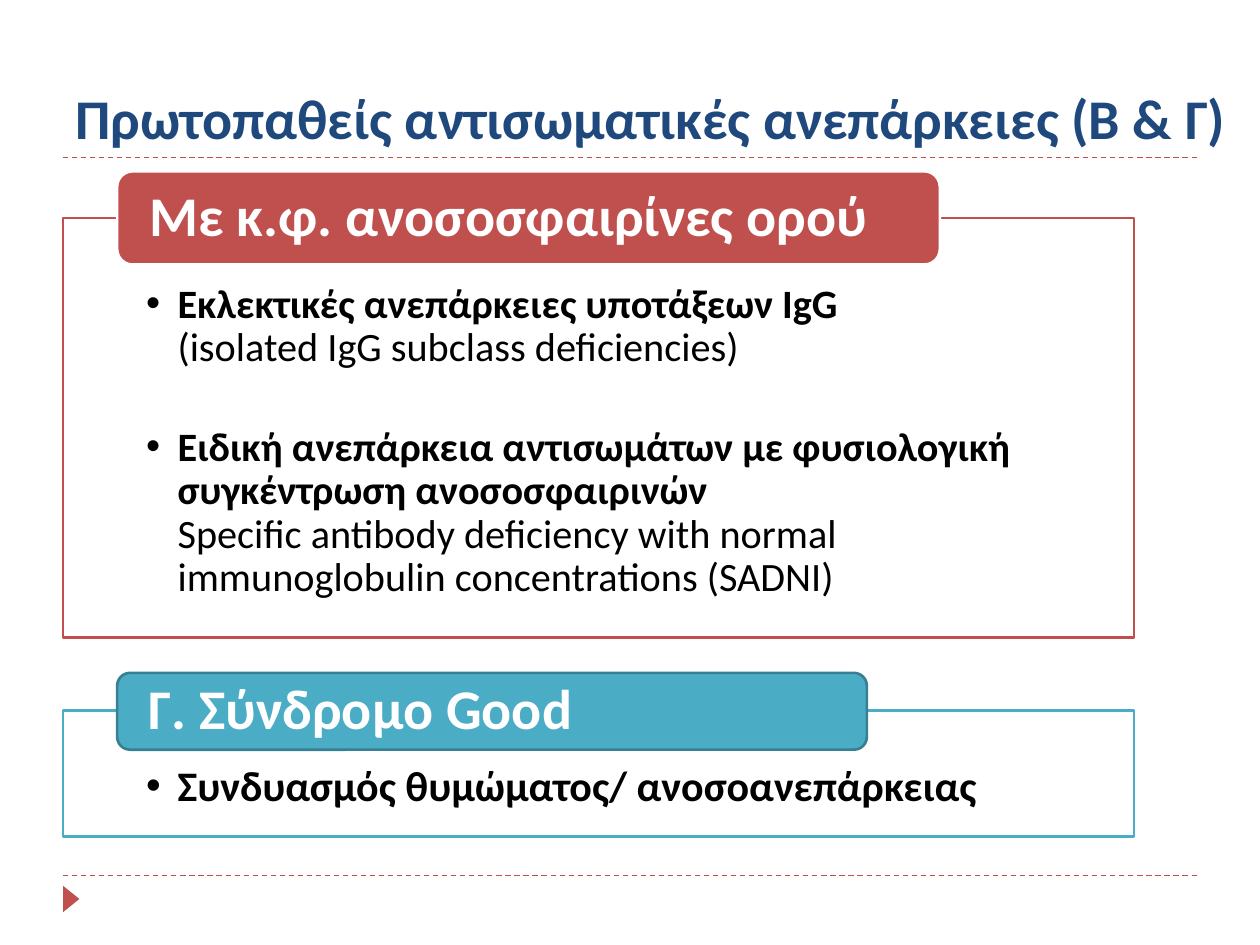
from lxml import etree
from pptx import Presentation
from pptx.dml.color import RGBColor
from pptx.enum import dml, shapes, text
from pptx.oxml import ns
from pptx.util import Inches, Pt

FONT = "Calibri"
NAVY = RGBColor(0x1F, 0x49, 0x7D)
RED = RGBColor(0xC0, 0x50, 0x4D)
TEAL = RGBColor(0x4B, 0xAC, 0xC6)
DARK_TEAL = RGBColor(0x37, 0x7F, 0x92)
WHITE = RGBColor(0xFF, 0xFF, 0xFF)
BLACK = RGBColor(0, 0, 0)
LEFT, RIGHT = 0.5, 9.5
HEADING_INSETS = (0.22, 0, 0.22, 0)


def format_run(run, size, color, bold=True):
    """Set the font of one run."""
    run.font.name = FONT
    run.font.size = Pt(size)
    run.font.bold = bold
    run.font.color.rgb = color


def set_insets(frame, insets):
    """Set the left, top, right and bottom margins of a text frame."""
    (frame.margin_left, frame.margin_top,
     frame.margin_right, frame.margin_bottom) = map(Inches, insets)
    frame.word_wrap = True


def add_box(slide, kind, box, fill, line=None):
    """Add a flat preset shape in the given box."""
    shape = slide.shapes.add_shape(kind, *map(Inches, box))
    shape.shadow.inherit = False
    shape.fill.solid()
    shape.fill.fore_color.rgb = fill
    if line is None:
        shape.line.fill.background()
    else:
        shape.line.color.rgb = line
        shape.line.width = Pt(1.5)
    return shape


def add_rule(slide, top):
    """Add a dashed horizontal rule across the slide."""
    rule = slide.shapes.add_connector(
        shapes.MSO_CONNECTOR.STRAIGHT,
        Inches(LEFT), Inches(top), Inches(RIGHT), Inches(top))
    rule.line.color.rgb = RED
    rule.line.width = Pt(0.75)
    rule.line.dash_style = dml.MSO_LINE.DASH
    etree.SubElement(rule._element.spPr, ns.qn("a:effectLst"))


def add_bullet(paragraph):
    """Give a paragraph a hanging bullet."""
    properties = paragraph._p.get_or_add_pPr()
    properties.set("marL", str(Inches(0.25)))
    properties.set("indent", str(Inches(-0.25)))
    etree.SubElement(properties, ns.qn("a:buFont"), typeface="Arial")
    etree.SubElement(properties, ns.qn("a:buChar"), char="•")


def add_title(slide, box, wording):
    """Place and format the title placeholder."""
    title = slide.shapes.title
    title.left, title.top, title.width, title.height = map(Inches, box)
    frame = title.text_frame
    frame.text = wording
    frame.word_wrap = True
    frame.auto_size = text.MSO_AUTO_SIZE.NONE
    frame.vertical_anchor = text.MSO_ANCHOR.BOTTOM
    paragraph = frame.paragraphs[0]
    paragraph.alignment = text.PP_ALIGN.LEFT
    format_run(paragraph.runs[0], 32, NAVY)


def add_section(slide, box, insets, color, items, size, heading, heading_box, border):
    """Add a bordered list with a rounded heading over its top edge."""
    panel = add_box(slide, shapes.MSO_SHAPE.RECTANGLE, box, WHITE, color)
    frame = panel.text_frame
    set_insets(frame, insets)
    frame.vertical_anchor = text.MSO_ANCHOR.TOP
    for index, item in enumerate(items):
        paragraph = frame.add_paragraph() if index else frame.paragraphs[0]
        paragraph.text = item
        paragraph.alignment = text.PP_ALIGN.LEFT
        paragraph.line_spacing = 0.9
        paragraph.space_after = Pt(32 if index < len(items) - 1 else 0)
        add_bullet(paragraph)
        for position, run in enumerate(paragraph.runs):
            format_run(run, size, BLACK, bold=position == 0)

    label = add_box(slide, shapes.MSO_SHAPE.ROUNDED_RECTANGLE, heading_box, color, border)
    label.text_frame.text = heading
    set_insets(label.text_frame, HEADING_INSETS)
    label.text_frame.vertical_anchor = text.MSO_ANCHOR.MIDDLE
    paragraph = label.text_frame.paragraphs[0]
    paragraph.alignment = text.PP_ALIGN.LEFT
    paragraph.line_spacing = 0.9
    format_run(paragraph.runs[0], 32, WHITE)


def main():
    """Build and save the slide."""
    presentation = Presentation()
    presentation.slide_width, presentation.slide_height = Inches(10), Inches(7.5)
    slide = presentation.slides.add_slide(presentation.slide_layouts[5])
    for top in (6.95, 1.25):
        add_rule(slide, top)
    marker = add_box(slide, shapes.MSO_SHAPE.ISOSCELES_TRIANGLE, (0.46, 7.07, 0.21, 0.13), RED)
    marker.rotation = 90
    add_title(slide, (LEFT, 0.17, 9.5, 1.08), "Πρωτοπαθείς αντισωματικές ανεπάρκειες (Β & Γ)")
    add_section(
        slide, (LEFT, 1.73, 8.5, 3.33), (0.66, 0.52, 0.66, 0.18), RED,
        ["Εκλεκτικές ανεπάρκειες υποτάξεων IgG\v(isolated IgG subclass deficiencies)",
         "Ειδική ανεπάρκεια αντισωμάτων με φυσιολογική συγκέντρωση ανοσοσφαιρινών\v"
         "Specific antibody deficiency with normal immunoglobulin concentrations (SADNI)"],
        23, "Με κ.φ. ανοσοσφαιρίνες ορού", (0.93, 1.36, 6.53, 0.74), WHITE)
    add_section(
        slide, (LEFT, 5.64, 8.5, 1), (0.66, 0.43, 0.66, 0.19), TEAL,
        ["Συνδυασμός θυμώματος/ ανοσοανεπάρκειας"],
        24, "Γ. Σύνδρομο Good", (0.93, 5.34, 5.95, 0.61), DARK_TEAL)
    presentation.save("out.pptx")


if __name__ == "__main__":
    main()
